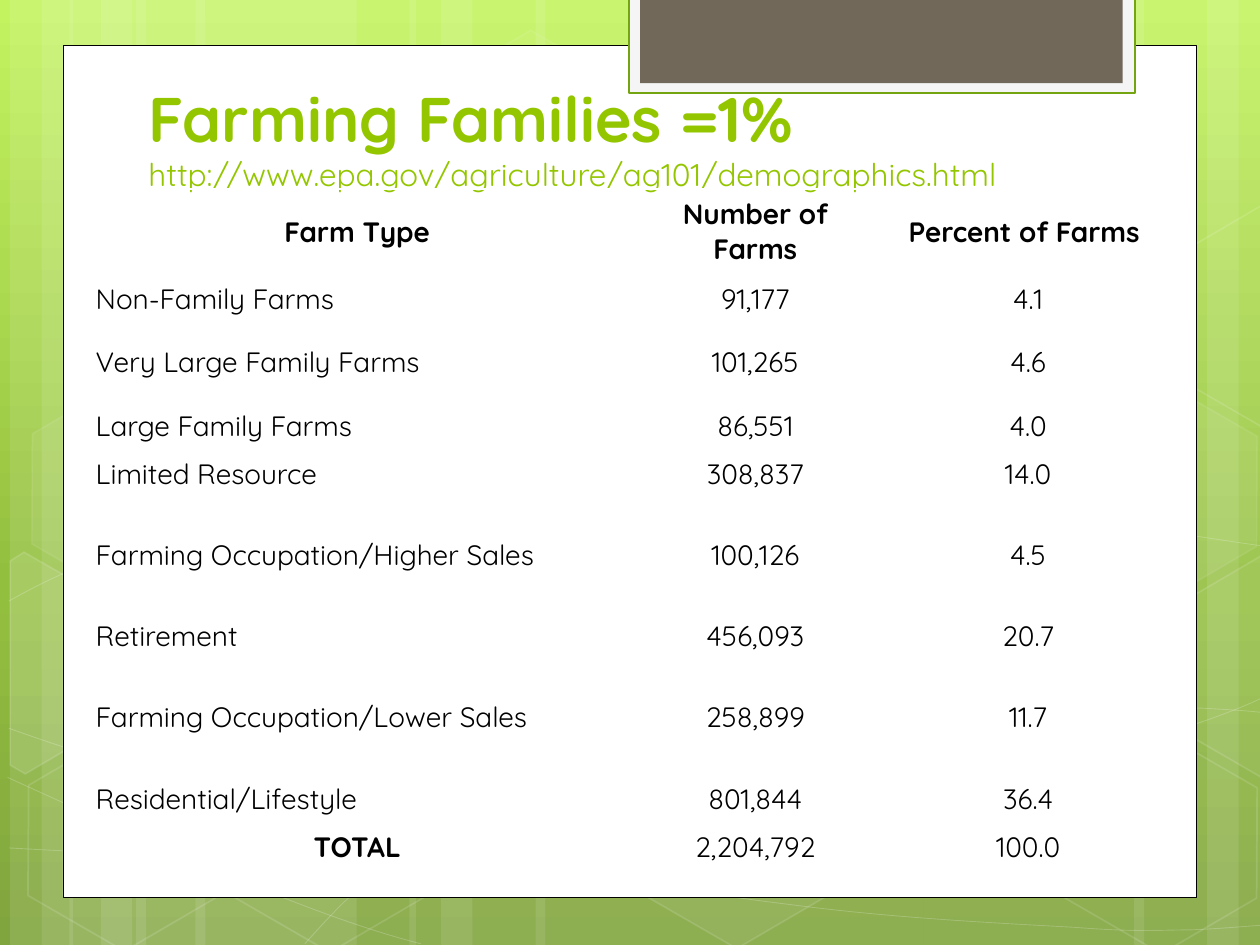
import copy
import math
import pptx
import pptx.util
import pptx.dml.color
import pptx.enum.shapes
import pptx.enum.text
import pptx.oxml
import pptx.oxml.ns

Inches = pptx.util.Inches
Pt = pptx.util.Pt
RGBColor = pptx.dml.color.RGBColor
MSO_SHAPE = pptx.enum.shapes.MSO_SHAPE
PP_ALIGN = pptx.enum.text.PP_ALIGN
MSO_ANCHOR = pptx.enum.text.MSO_ANCHOR

WHITE = RGBColor(0xFF, 0xFF, 0xFF)
BLACK = RGBColor(0x00, 0x00, 0x00)
LIME = RGBColor(0x94, 0xC6, 0x00)
FRAME_FILL = RGBColor(0xF5, 0xF5, 0xF5)
FRAME_LINE = RGBColor(0x74, 0xA5, 0x10)
BROWN = RGBColor(0x71, 0x68, 0x5A)
BG_STOPS = [
    (0, RGBColor(0xC3, 0xF3, 0x5F)),
    (0.62, RGBColor(0x93, 0xBF, 0x3F)),
    (1, RGBColor(0x81, 0xA5, 0x3E)),
]
FONT = "Quicksand"


def style(sp, fill=None, fill_alpha=100, line=None, width=1, line_alpha=100):
    sp.shadow.inherit = False
    for fmt, color, alpha, parent in (
        (sp.fill, fill, fill_alpha, "."),
        (sp.line.fill, line, line_alpha, "./a:ln"),
    ):
        if color is None:
            fmt.background()
            continue
        fmt.solid()
        fmt.fore_color.rgb = color
        if alpha < 100:
            clr = sp._element.spPr.xpath(parent + "/a:solidFill/a:srgbClr")[0]
            clr.append(pptx.oxml.parse_xml(f'<a:alpha {pptx.oxml.ns.nsdecls("a")} val="{alpha * 1000}"/>'))
    if line is not None:
        sp.line.width = Pt(width)


def add_outline(points, close):
    pts = [(Inches(x), Inches(y)) for x, y in points]
    fb = s.shapes.build_freeform(*pts[0])
    fb.add_line_segments(pts[1:], close=close)
    return fb.convert_to_shape()


prs = pptx.Presentation()
prs.slide_width, prs.slide_height = Inches(10), Inches(7.5)
s = prs.slides.add_slide(prs.slide_layouts[6])

bg = s.background.fill
bg.gradient()
bg.gradient_angle = 270
stop_list = s.element.xpath(".//a:gsLst")[0]
stop_list.append(copy.deepcopy(stop_list[0]))
for stop, (position, color) in zip(bg.gradient_stops, BG_STOPS):
    stop.position = position
    stop.color.rgb = color

strips = [
    (1.08, 1.75, 0), (0.08, 0.5, 0), (0.33, 0.83, 0), (1.55, 1.75, 0), (0.55, 0.5, 0), (0.8, 0.83, 0),
    (7.33, 1.75, 180), (9.58, 0.5, 180), (9, 0.83, 180), (4.25, 3.08, 0), (3.25, 0.5, 0), (3.5, 0.83, 0),
]
for left, width, rotation in strips:
    sp = s.shapes.add_shape(MSO_SHAPE.RECTANGLE, Inches(left), 0, Inches(width), prs.slide_height)
    sp.rotation = rotation
    style(sp, WHITE, 10)

curves = [
    [[(0.07, 6.73)], [(0.61, 6.76), (1.15, 6.79), (1.9, 6.78)], [(2.65, 6.77), (3.58, 6.75), (4.58, 6.65)],
     [(5.58, 6.55), (7, 6.36), (7.92, 6.17)], [(8.83, 5.98), (9.77, 5.68), (10.07, 5.51)]],
    [[(0.07, 4.77)], [(0.36, 4.61), (0.65, 4.46), (1.21, 4.31)], [(1.78, 4.16), (2.59, 3.94), (3.47, 3.87)],
     [(4.36, 3.8), (5.44, 3.79), (6.54, 3.87)], [(7.64, 3.95), (9.47, 4.26), (10.07, 4.34)]],
    [[(0.06, 6.17)], [(1.27, 6.72), (2.47, 7.27), (3.34, 7.49)]],
    [[(0.07, 5.78)], [(0.38, 5.89), (0.7, 6), (1.28, 6.16)], [(1.86, 6.31), (2.73, 6.56), (3.57, 6.73)],
     [(4.4, 6.9), (5.45, 7.08), (6.28, 7.18)], [(7.11, 7.29), (8, 7.33), (8.53, 7.36)],
     [(9.05, 7.4), (9.19, 7.38), (9.45, 7.38)], [(9.71, 7.37), (9.89, 7.35), (10.07, 7.34)]],
    [[(2.42, 7.49)], [(2.6, 7.29), (2.78, 7.09), (3.02, 6.91)], [(3.26, 6.73), (3.6, 6.53), (3.88, 6.39)],
     [(4.16, 6.25), (4.33, 6.19), (4.7, 6.09)], [(5.06, 5.99), (5.73, 5.85), (6.08, 5.78)],
     [(6.44, 5.71), (6.49, 5.71), (6.8, 5.69)], [(7.11, 5.66), (7.6, 5.63), (7.94, 5.62)],
     [(8.29, 5.61), (8.86, 5.62), (8.86, 5.62)], [(9.53, 5.62)],
     [(9.71, 5.63), (9.88, 5.64), (9.97, 5.65)], [(10.06, 5.66), (10.03, 5.65), (10.06, 5.66)]],
]
for segments in curves:
    sp = add_outline([point for segment in segments for point in segment], False)
    nodes = iter(sp._element.xpath(".//a:path/*"))
    for segment in segments:
        node = next(nodes)
        if len(segment) == 3:
            bezier = pptx.oxml.parse_xml(f'<a:cubicBezTo {pptx.oxml.ns.nsdecls("a")}/>')
            node.addprevious(bezier)
            for part in (node, next(nodes), next(nodes)):
                bezier.append(part[0])
                part.getparent().remove(part)
    style(sp, line=WHITE, width=0.5, line_alpha=20)

hexagons = [
    (3.34, 0.36, 4, 8), (4.97, 5.89, 6, 12), (0.11, 5.91, 0, 12), (0.14, 3.12, 7, 8), (1.74, 5.92, 0, 12),
    (7.53, 4.53, 10, 12), (8.34, 5.93, 0, 12), (8.34, 3.14, 7, 8),
]
cut_hexagons = [
    (0.36, 5.35, [(0.08, 4.45), (0.19, 4.38), (0.96, 4.82), (0.95, 5.7), (0.2, 6.14), (0.08, 6.07)], 10),
    (9.85, 5.2, [(9.26, 4.85), (10.01, 4.41), (10.09, 4.46), (10.09, 6.13), (10.02, 6.17), (9.26, 5.73)], 4),
    (9.85, 2.41, [(9.26, 2.07), (10.01, 1.63), (10.1, 1.68), (10.09, 3.35), (10.02, 3.39), (9.26, 2.95)], 0),
]
TILT = 30
cos, sin = math.cos(math.radians(TILT)), math.sin(math.radians(TILT))
for left, top, fill_alpha, line_alpha in hexagons:
    sp = s.shapes.add_shape(MSO_SHAPE.HEXAGON, Inches(left), Inches(top), Inches(1.75), Inches(1.52))
    sp.adjustments[0] = 0.285
    sp.adjustments[1] = 1.155
    sp.rotation = TILT
    style(sp, WHITE if fill_alpha else None, fill_alpha, WHITE, 1, line_alpha)
for cx, cy, corners, fill_alpha in cut_hexagons:
    upright = [
        (cx + (x - cx) * cos + (y - cy) * sin, cy - (x - cx) * sin + (y - cy) * cos) for x, y in corners
    ]
    sp = add_outline(upright, True)
    sp.rotation = TILT
    style(sp, WHITE if fill_alpha else None, fill_alpha, WHITE, 1, 12)

panels = [
    (0.5, 0.36, 9, 6.76, WHITE, BLACK, 0.5),
    (4.99, -0.02, 4.02, 0.76, FRAME_FILL, FRAME_LINE, 1.25),
    (5.08, -0.02, 3.83, 0.68, BROWN, None, 0),
]
for left, top, width, height, fill, line, line_width in panels:
    sp = s.shapes.add_shape(MSO_SHAPE.RECTANGLE, Inches(left), Inches(top), Inches(width), Inches(height))
    style(sp, fill, line=line, width=line_width)

tf = s.shapes.add_textbox(Inches(1.08), Inches(0.58), Inches(7.68), Inches(1)).text_frame
tf.word_wrap = True
tf.vertical_anchor = MSO_ANCHOR.BOTTOM
p = tf.paragraphs[0]
for text, size, bold in (
    ("Farming Families =1%", 36, True),
    ("http://www.epa.gov/agriculture/ag101/demographics.html", 18, False),
):
    if p.runs:
        p.add_line_break()
    r = p.add_run()
    r.text = text
    r.font.name, r.font.size, r.font.bold = FONT, Pt(size), bold
    r.font.color.rgb = LIME

rows = [
    ("Farm Type", "Number of Farms", "Percent of Farms "),
    ("Non-Family Farms", "91,177", "4.1"),
    ("Very Large Family Farms", "101,265", "4.6"),
    ("Large Family Farms", "86,551", "4.0"),
    ("Limited Resource", "308,837", "14.0"),
    ("Farming Occupation/Higher Sales", "100,126", "4.5"),
    ("Retirement", "456,093", "20.7"),
    ("Farming Occupation/Lower Sales", "258,899", "11.7"),
    ("Residential/Lifestyle", "801,844", "36.4"),
    ("TOTAL", "2,204,792", "100.0"),
]
col_widths = [4.33, 1.99, 2.34]
row_heights = [0.68, 0.38, 0.63, 0.38, 0.38, 0.91, 0.38, 0.91, 0.38, 0.38]
table = s.shapes.add_table(len(rows), len(col_widths), Inches(0.67), Inches(1.5), Inches(8.67), Inches(5.42)).table
table.first_row = table.horz_banding = False
for col, width in zip(table.columns, col_widths):
    col.width = Inches(width)
for i, (row, height) in enumerate(zip(rows, row_heights)):
    table.rows[i].height = Inches(height)
    for j, text in enumerate(row):
        cell = table.cell(i, j)
        cell.fill.background()
        cell.vertical_anchor = MSO_ANCHOR.MIDDLE
        cell.margin_left = cell.margin_right = Inches(0.09)
        cell.margin_top = cell.margin_bottom = Inches(0.04)
        p = cell.text_frame.paragraphs[0]
        p.alignment = PP_ALIGN.LEFT if j == 0 and 0 < i < len(rows) - 1 else PP_ALIGN.CENTER
        r = p.add_run()
        r.text = text
        r.font.name, r.font.size = FONT, Pt(16)
        r.font.bold = i == 0 or text == "TOTAL"
        r.font.color.rgb = BLACK

prs.save("out.pptx")
